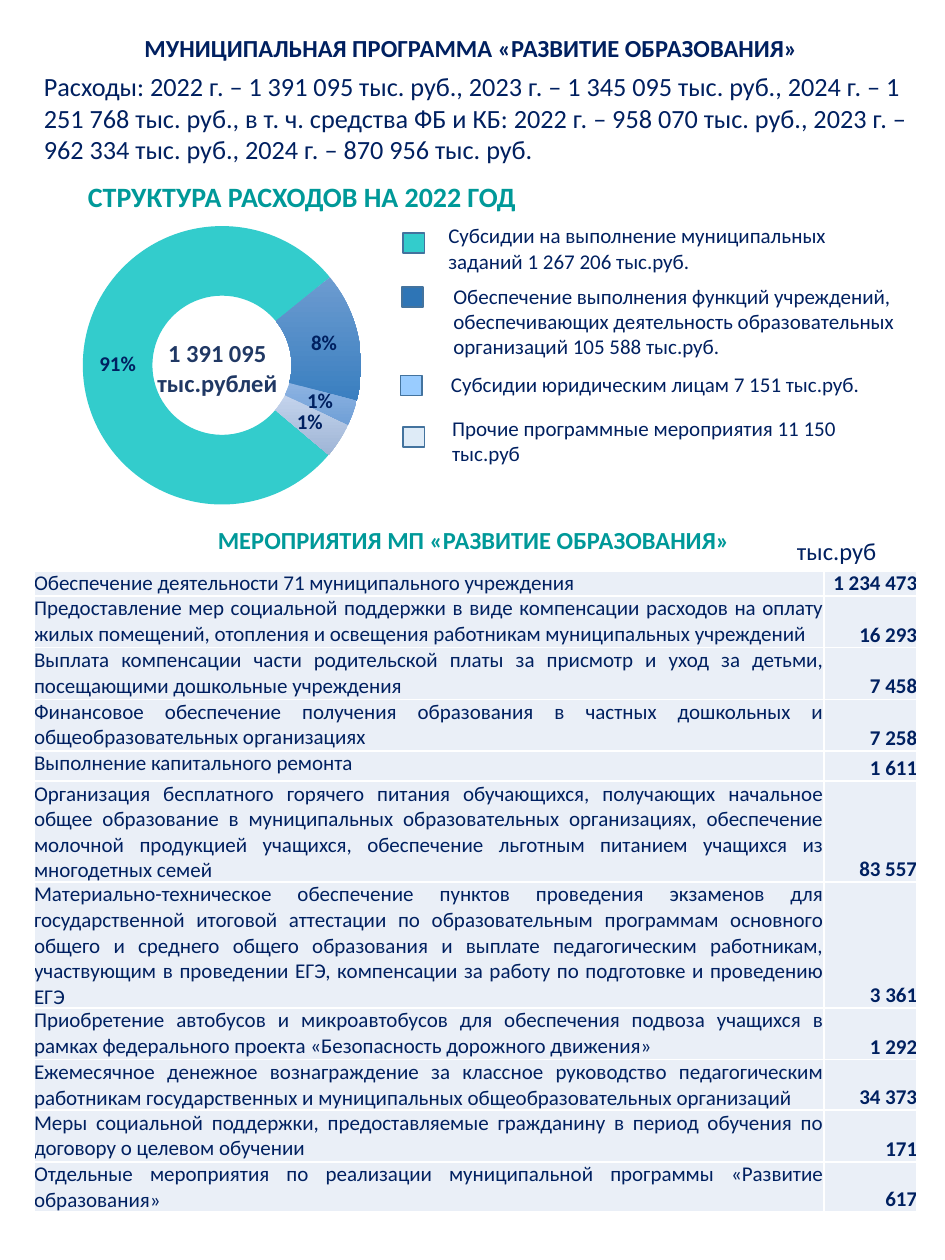
"""Build the one-page budget slide for the education programme."""
from typing import Any, NamedTuple

from pptx import Presentation
from pptx.chart.data import CategoryChartData
from pptx.dml.color import RGBColor
from pptx.enum.chart import XL_CHART_TYPE
from pptx.enum.shapes import MSO_SHAPE
from pptx.enum.text import MSO_ANCHOR, MSO_AUTO_SIZE, PP_ALIGN
from pptx.oxml import parse_xml
from pptx.oxml.ns import nsdecls
from pptx.slide import Slide
from pptx.util import Inches, Pt

NAVY, TEAL, PALE = "002060", "009999", "EAEFF7"
PLAIN = "{2D5ABB26-0587-4C30-8999-92F81FD0307C}"


class Box(NamedTuple):
    left: float
    top: float
    width: float
    height: float


class Note(NamedTuple):
    box: Box
    text: str
    size: int
    color: str = NAVY
    bold: bool = False
    align: Any = PP_ALIGN.LEFT


class Key(NamedTuple):
    left: float
    top: float
    fill: str
    note: Note


class Slice(NamedTuple):
    value: int
    label: str
    start: str
    end: str


class Item(NamedTuple):
    height: float
    text: str
    sum: str


NOTES = [
    Note(Box(0.6, 1.38, 4.24, 0.37), "СТРУКТУРА РАСХОДОВ НА 2022 ГОД", 16, TEAL, True),
    Note(Box(0.25, 0.51, 7.07, 0.86),
         "Расходы: 2022 г. – 1 391 095 тыс. руб., 2023 г. – 1 345 095 тыс. руб., "
         "2024 г. – 1 251 768 тыс. руб., в т. ч. средства ФБ и КБ: 2022 г. – "
         "958 070 тыс. руб., 2023 г. – 962 334 тыс. руб., 2024 г. – 870 956 тыс. руб.", 15),
    Note(Box(0.32, 4.12, 6.88, 0.34), "МЕРОПРИЯТИЯ МП «РАЗВИТИЕ ОБРАЗОВАНИЯ»",
         14, TEAL, True, PP_ALIGN.CENTER),
]
CELLS = [
    Note(Box(1.2, 2.69, 1.05, 0.47), "1 391 095 тыс.рублей", 14, "203864", True, PP_ALIGN.CENTER),
    Note(Box(6.22, 4.26, 0.84, 0.23), "тыс.руб", 14, align=PP_ALIGN.CENTER),
]
KEYS = [
    Key(3.2, 1.85, "33CCCC", Note(Box(3.46, 1.72, 3.75, 0.5),
        "Субсидии на выполнение муниципальных заданий 1 267 206 тыс.руб.", 12)),
    Key(3.19, 2.28, "2E75B6", Note(Box(3.5, 2.2, 3.76, 0.71),
        "Обеспечение выполнения функций учреждений, обеспечивающих деятельность "
        "образовательных организаций 105 588 тыс.руб.", 12)),
    Key(3.18, 2.98, "99CCFF", Note(Box(3.48, 2.9, 3.75, 0.3),
        "Субсидии юридическим лицам 7 151 тыс.руб.", 12)),
    Key(3.2, 3.39, "DEEBF7", Note(Box(3.49, 3.25, 3.75, 0.5),
        "Прочие программные мероприятия 11 150 тыс.руб", 12)),
]
SLICES = [
    Slice(78, "91%", "33CCCC", "33CCCC"),
    Slice(15, "8%", "6C9BD0", "3A7FC0"),
    Slice(3, "1%", "8DB3E2", "6F9FD6"),
    Slice(4, "1%", "C3D3EC", "9FB5D6"),
]
ITEMS = [
    Item(0.2, "Обеспечение деятельности 71 муниципального учреждения", "1 234 473"),
    Item(0.41, "Предоставление мер социальной поддержки в виде компенсации расходов на оплату "
         "жилых помещений, отопления и освещения работникам муниципальных учреждений", "16 293"),
    Item(0.41, "Выплата компенсации части родительской платы за присмотр и уход за детьми, "
         "посещающими дошкольные учреждения", "7 458"),
    Item(0.41, "Финансовое обеспечение получения образования в частных дошкольных и "
         "общеобразовательных организациях", "7 258"),
    Item(0.24, "Выполнение капитального ремонта", "1 611"),
    Item(0.8, "Организация бесплатного горячего питания обучающихся, получающих начальное "
         "общее образование в муниципальных образовательных организациях, обеспечение "
         "молочной продукцией учащихся, обеспечение льготным питанием учащихся из "
         "многодетных семей", "83 557"),
    Item(1, "Материально-техническое обеспечение пунктов проведения экзаменов для "
         "государственной итоговой аттестации по образовательным программам основного "
         "общего и среднего общего образования и выплате педагогическим работникам, "
         "участвующим в проведении ЕГЭ, компенсации за работу по подготовке и проведению "
         "ЕГЭ", "3 361"),
    Item(0.41, "Приобретение автобусов и микроавтобусов для обеспечения подвоза учащихся в "
         "рамках федерального проекта «Безопасность дорожного движения»", "1 292"),
    Item(0.4, "Ежемесячное денежное вознаграждение за классное руководство педагогическим "
         "работникам государственных и муниципальных общеобразовательных организаций", "34 373"),
    Item(0.41, "Меры социальной поддержки, предоставляемые гражданину в период обучения по "
         "договору о целевом обучении", "171"),
    Item(0.4, "Отдельные мероприятия по реализации муниципальной программы «Развитие "
         "образования»", "617"),
]


def rgb(color: str) -> RGBColor:
    return RGBColor.from_string(color)


def apply(thing: Any, values: dict[str, Any]) -> None:
    for name, value in values.items():
        setattr(thing, name, value)


def place(box: Box) -> list[int]:
    return [Inches(side) for side in box]


def style(font: Any, size: int, color: str = NAVY, bold: bool = False) -> None:
    apply(font, {"name": "Calibri", "size": Pt(size), "bold": bold})
    font.color.rgb = rgb(color)


def write(frame: Any, text: str, size: int, color: str, bold: bool, align: Any) -> None:
    frame.text = text
    para = frame.paragraphs[0]
    para.alignment = align
    style(para.runs[0].font, size, color, bold)


def add_note(slide: Slide, note: Note) -> None:
    frame = slide.shapes.add_textbox(*place(note.box)).text_frame
    apply(frame, {"word_wrap": True, "auto_size": MSO_AUTO_SIZE.SHAPE_TO_FIT_TEXT})
    write(frame, *note[1:])


def add_key(slide: Slide, key: Key) -> None:
    mark = slide.shapes.add_shape(MSO_SHAPE.RECTANGLE, *place(Box(key.left, key.top, 0.17, 0.16)))
    mark.shadow.inherit = False
    mark.fill.solid()
    mark.fill.fore_color.rgb = rgb(key.fill)
    mark.line.color.rgb = rgb("43739E")
    mark.line.width = Pt(1)
    add_note(slide, key.note)


def add_grid(slide: Slide, rows: int, cols: int, box: Box) -> Any:
    grid = slide.shapes.add_table(rows, cols, *place(box)).table
    apply(grid, {"first_row": False, "horz_banding": False})
    for cell in grid.iter_cells():
        apply(cell, {f"margin_{side}": 0 for side in ("left", "right", "top", "bottom")})
        cell.vertical_anchor = MSO_ANCHOR.BOTTOM
    return grid


def add_cell(slide: Slide, note: Note) -> None:
    grid = add_grid(slide, 1, 1, note.box)
    grid._tbl.tblPr[0].text = PLAIN
    write(grid.cell(0, 0).text_frame, *note[1:])


def add_items(slide: Slide) -> None:
    grid = add_grid(slide, len(ITEMS), 2, Box(0.27, 4.53, 7.02, 5.07))
    for col, width in zip(grid.columns, (6.27, 0.74)):
        col.width = Inches(width)
    for row, item in zip(grid.rows, ITEMS):
        row.height = Inches(item.height)
        name, total = row.cells
        name.vertical_anchor = MSO_ANCHOR.TOP
        write(name.text_frame, item.text, 12, NAVY, False, PP_ALIGN.JUSTIFY)
        write(total.text_frame, item.sum, 12, NAVY, True, PP_ALIGN.RIGHT)
        for cell in (name, total):
            cell.fill.solid()
            cell.fill.fore_color.rgb = rgb(PALE)


def add_ring(slide: Slide) -> None:
    data = CategoryChartData()
    data.categories = [str(n + 1) for n in range(len(SLICES))]
    data.add_series("Series 1", [part.value for part in SLICES])
    box = place(Box(0.35, 1.71, 3.07, 2.38))
    chart = slide.shapes.add_chart(XL_CHART_TYPE.DOUGHNUT, *box, data).chart
    apply(chart, {"has_legend": False, "has_title": False})
    style(chart.font, 18, "000000")
    plot = chart.plots[0]
    plot.vary_by_categories = True
    for n, part in enumerate(SLICES):
        point = plot.series[0].points[n]
        fill = point.format.fill
        if part.start == part.end:
            fill.solid()
            fill.fore_color.rgb = rgb(part.start)
        else:
            fill.gradient()
            fill.gradient_angle = 270
            for stop, color in zip(fill.gradient_stops, part[2:]):
                stop.color.rgb = rgb(color)
        write(point.data_label.text_frame, part.label, 12, NAVY, True, PP_ALIGN.CENTER)
    root = chart._chartSpace
    root.xpath("//c:firstSliceAng")[0].set("val", "130")
    root.xpath("//c:holeSize")[0].set("val", "50")
    area = root.xpath("//c:plotArea")[0]
    for old in area.xpath("./c:layout"):
        area.remove(old)
    spots = {"x": 0.1, "y": 0, "w": 0.72, "h": 1}
    modes = '<c:layoutTarget val="inner"/><c:xMode val="edge"/><c:yMode val="edge"/>'
    sides = "".join(f'<c:{name} val="{value}"/>' for name, value in spots.items())
    area.insert(0, parse_xml(f'<c:layout {nsdecls("c")}><c:manualLayout>{modes}{sides}'
                             "</c:manualLayout></c:layout>"))


def main() -> None:
    deck = Presentation()
    apply(deck, {"slide_width": Inches(7.5), "slide_height": Inches(10)})
    slide = deck.slides.add_slide(deck.slide_layouts[5])
    add_ring(slide)
    title = slide.shapes.title
    apply(title, dict(zip(("left", "top", "width", "height"), place(Box(0.19, 0.18, 7.1, 0.42)))))
    apply(title.text_frame, {"vertical_anchor": MSO_ANCHOR.MIDDLE, "word_wrap": True})
    write(title.text_frame, "МУНИЦИПАЛЬНАЯ ПРОГРАММА «РАЗВИТИЕ ОБРАЗОВАНИЯ»",
          14, NAVY, True, PP_ALIGN.CENTER)
    title.text_frame.paragraphs[0].line_spacing = 0.9
    for note in NOTES:
        add_note(slide, note)
    add_items(slide)
    for note in CELLS:
        add_cell(slide, note)
    for key in KEYS:
        add_key(slide, key)
    deck.save("out.pptx")


if __name__ == "__main__":
    main()
